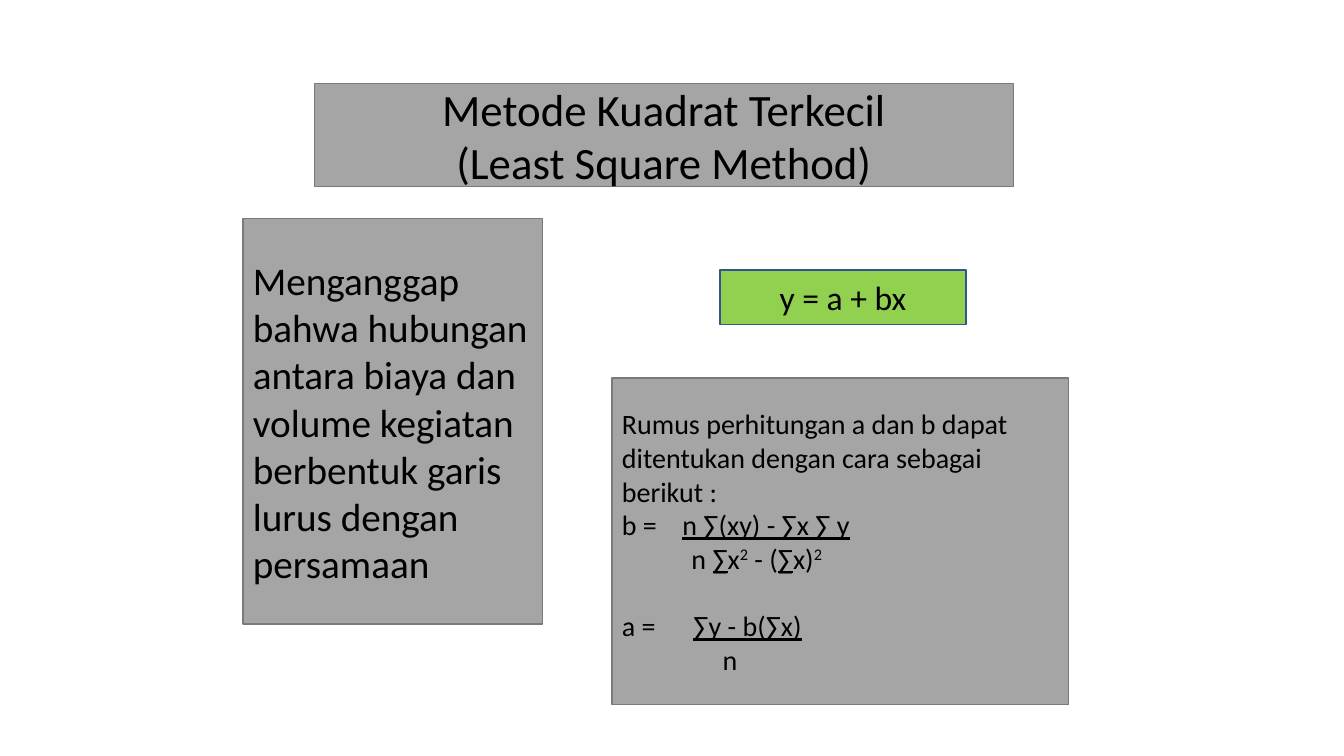
from pptx import Presentation
from pptx.dml.color import RGBColor
from pptx.enum.shapes import MSO_SHAPE
from pptx.enum.text import MSO_ANCHOR, MSO_AUTO_SIZE, PP_ALIGN
from pptx.util import Inches, Pt

GRAY, GRAY_EDGE = "A5A5A5", "7A7A7A"
GREEN, BLUE_EDGE = "92D050", "325491"
BLACK = "000000"
TITLE_BOX = (3.12, 0.83, 6.93, 1.02)
ASSUMPTION_BOX = (2.41, 2.17, 2.97, 4.02)
EQUATION_BOX = (7.14, 2.68, 2.44, 0.54)
FORMULA_BOX = (6.07, 3.75, 4.53, 3.24)

NORMAL, UNDERLINE, SUPERSCRIPT = "normal", "underline", "superscript"
FORMULA_LINES = [
    (0, 0, 0, [("Rumus perhitungan a dan b dapat ditentukan dengan cara sebagai berikut :", NORMAL)]),
    (0.6, -0.6, 0, [("b =\t", NORMAL), ("n ∑(xy) - ∑x ∑ y", UNDERLINE)]),
    (0.69, 0, 0, [("n ", NORMAL), ("∑", UNDERLINE), ("x", NORMAL), ("2", SUPERSCRIPT),
                  (" - (", NORMAL), ("∑", UNDERLINE), ("x)", NORMAL), ("2", SUPERSCRIPT)]),
    (0.71, -0.71, 24, [("a =\t", NORMAL), ("∑y - b(∑x)", UNDERLINE)]),
    (1, 0, 0, [("n", NORMAL)]),
]


def color(hex_value):
    """Turn a hex string into a colour."""
    return RGBColor.from_string(hex_value)


def style_box(shape, box, fill, edge):
    """Place a shape and give it its fill, outline and text frame settings."""
    shape.left, shape.top, shape.width, shape.height = map(Inches, box)
    shape.fill.solid()
    shape.fill.fore_color.rgb = color(fill)
    shape.line.color.rgb = color(edge)
    shape.line.width = Pt(1)
    frame = shape.text_frame
    frame.word_wrap = True
    frame.auto_size = MSO_AUTO_SIZE.NONE
    frame.vertical_anchor = MSO_ANCHOR.MIDDLE
    return frame


def add_box(slide, box, fill, edge):
    """Add a styled rectangle and return its text frame."""
    shape = slide.shapes.add_shape(MSO_SHAPE.RECTANGLE, *map(Inches, box))
    shape.shadow.inherit = False
    return style_box(shape, box, fill, edge)


def format_paragraphs(frame, size, alignment):
    """Give every paragraph of a frame the same font and alignment."""
    for paragraph in frame.paragraphs:
        paragraph.alignment = alignment
        paragraph.line_spacing = 1.0
        paragraph.font.name = "Calibri"
        paragraph.font.size = Pt(size)
        paragraph.font.color.rgb = color(BLACK)


def fill_title(slide, box):
    """Format the title placeholder as a gray banner."""
    frame = style_box(slide.shapes.title, box, GRAY, GRAY_EDGE)
    frame.text = "Metode Kuadrat Terkecil\n(Least Square Method)"
    format_paragraphs(frame, 32, PP_ALIGN.CENTER)


def add_equation(slide, box):
    """Add the green box with the line equation."""
    frame = add_box(slide, box, GREEN, BLUE_EDGE)
    frame.text = "y = a + bx"
    format_paragraphs(frame, 24, PP_ALIGN.CENTER)


def add_assumption(slide, box):
    """Add the gray box with the method's assumption."""
    frame = add_box(slide, box, GRAY, GRAY_EDGE)
    frame.text = ("Menganggap bahwa hubungan antara biaya dan volume kegiatan "
                  "berbentuk garis lurus dengan persamaan")
    format_paragraphs(frame, 28, PP_ALIGN.LEFT)


def add_formulas(slide, box):
    """Add the gray box with the fractions for b and a."""
    frame = add_box(slide, box, GRAY, GRAY_EDGE)
    for index, (margin, indent, space_before, pieces) in enumerate(FORMULA_LINES):
        paragraph = frame.add_paragraph() if index else frame.paragraphs[0]
        paragraph.space_before = Pt(space_before)
        properties = paragraph._p.get_or_add_pPr()
        properties.set("marL", str(Inches(margin)))
        properties.set("indent", str(Inches(indent)))
        for text, style in pieces:
            run = paragraph.add_run()
            run.text = text
            if style == UNDERLINE:
                run.font.underline = True
            elif style == SUPERSCRIPT:
                run.font._element.set("baseline", "30000")
    format_paragraphs(frame, 20, PP_ALIGN.LEFT)


def main():
    """Build the slide and save it."""
    presentation = Presentation()
    presentation.slide_width = Inches(13.33)
    presentation.slide_height = Inches(7.5)
    slide = presentation.slides.add_slide(presentation.slide_layouts[5])
    fill_title(slide, TITLE_BOX)
    add_equation(slide, EQUATION_BOX)
    add_assumption(slide, ASSUMPTION_BOX)
    add_formulas(slide, FORMULA_BOX)
    presentation.save("out.pptx")


if __name__ == "__main__":
    main()
